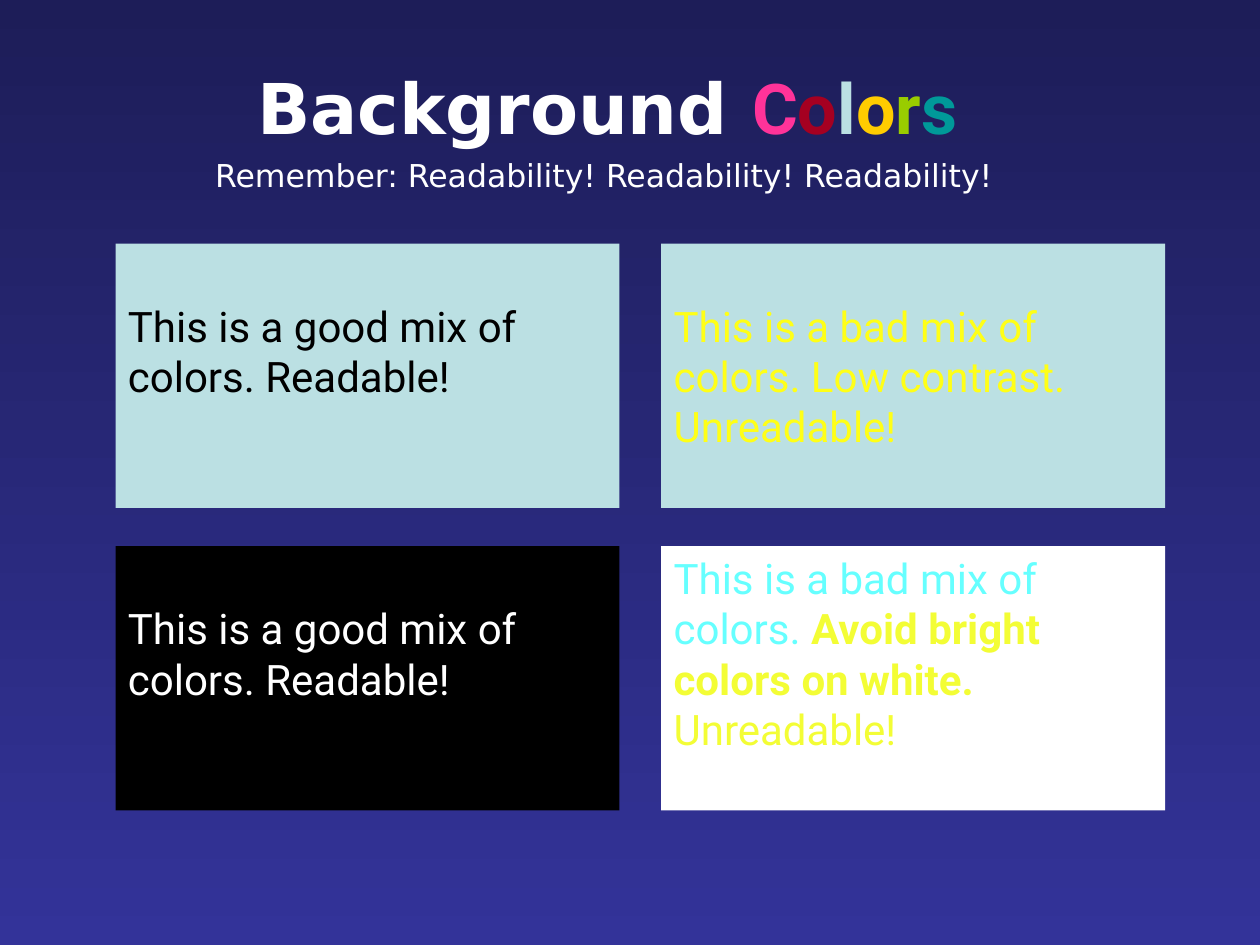
from pptx import Presentation
from pptx.dml.color import RGBColor
from pptx.enum.shapes import MSO_SHAPE
from pptx.enum.text import MSO_ANCHOR, PP_ALIGN
from pptx.util import Cm, Pt

RECTANGLE = MSO_SHAPE.RECTANGLE
TOP = MSO_ANCHOR.TOP
LEFT, CENTER = PP_ALIGN.LEFT, PP_ALIGN.CENTER

NIGHT = RGBColor(0x1D, 0x1D, 0x58)
INDIGO = RGBColor(0x33, 0x33, 0x99)
WHITE = RGBColor(0xFF, 0xFF, 0xFF)
BLACK = RGBColor(0x00, 0x00, 0x00)
PALE_BLUE = RGBColor(0xBB, 0xE0, 0xE3)
PINK = RGBColor(0xFF, 0x33, 0x99)
DARK_RED = RGBColor(0xA5, 0x00, 0x21)
GOLD = RGBColor(0xFF, 0xCC, 0x00)
LIME = RGBColor(0x99, 0xCC, 0x00)
TEAL = RGBColor(0x00, 0x99, 0x99)
YELLOW = RGBColor(0xFF, 0xFF, 0x17)
BRIGHT_YELLOW = RGBColor(0xF3, 0xFD, 0x35)
CYAN = RGBColor(0x66, 0xFF, 0xFF)

HEADING_FONT, BODY_FONT = "DejaVu Sans", "Roboto"

# Grid of examples
GRID_LEFT, GRID_TOP = 2.33, 4.91
BOX_WIDTH, BOX_HEIGHT = 10.16, 5.33
COLUMN_STEP, ROW_STEP = 11.0, 6.1
EDGE_INSET, LOWERED_INSET = 0.13, 1.14


def add_run(paragraph, text, *, color, size=24, font=BODY_FONT, bold=False):
    run = paragraph.add_run()
    run.text = text
    run.font.name = font
    run.font.size = Pt(size)
    run.font.bold = bold
    run.font.color.rgb = color


def write_lines(frame, lines, align=LEFT, spacing=1.0):
    """Each line is a list of (text, format) pairs."""
    for index, line in enumerate(lines):
        paragraph = frame.add_paragraph() if index else frame.paragraphs[0]
        paragraph.alignment = align
        paragraph.line_spacing = spacing
        for text, style in line:
            add_run(paragraph, text, **style)


def paint_background(slide):
    fill = slide.background.fill
    fill.gradient()
    fill.gradient_angle = 270
    for stop, color in zip(fill.gradient_stops, (NIGHT, INDIGO)):
        stop.color.rgb = color


def add_heading(slide):
    heading = slide.shapes.add_textbox(Cm(4.01), Cm(0.84), Cm(16.46), Cm(3.2))
    heading.text_frame.word_wrap = False
    title = [("Background ", dict(color=WHITE, size=40, font=HEADING_FONT, bold=True))]
    letter_colors = (PINK, DARK_RED, PALE_BLUE, GOLD, LIME, TEAL)
    for letter, color in zip("Colors", letter_colors):
        title.append((letter, dict(color=color, size=40, bold=True)))
    reminder = [
        ("Remember: Readability! Readability! Readability!",
         dict(color=WHITE, size=18, font=HEADING_FONT)),
        (" ", dict(color=BLACK, size=14)),
    ]
    write_lines(heading.text_frame, [title, reminder], CENTER, 1.2)


def add_example(slide, column, row, background, lines, top_inset=LOWERED_INSET):
    box = slide.shapes.add_shape(
        RECTANGLE,
        Cm(GRID_LEFT + column * COLUMN_STEP), Cm(GRID_TOP + row * ROW_STEP),
        Cm(BOX_WIDTH), Cm(BOX_HEIGHT))
    box.shadow.inherit = False
    box.fill.solid()
    box.fill.fore_color.rgb = background
    box.line.fill.background()
    frame = box.text_frame
    frame.word_wrap = True
    frame.vertical_anchor = TOP
    frame.margin_top = Cm(top_inset)
    write_lines(frame, lines)


def main():
    prs = Presentation()
    prs.slide_width, prs.slide_height = Cm(25.4), Cm(19.05)
    slide = prs.slides.add_slide(prs.slide_layouts[6])
    paint_background(slide)
    add_heading(slide)

    black, white = dict(color=BLACK), dict(color=WHITE)
    yellow, cyan = dict(color=YELLOW), dict(color=CYAN)
    bright = dict(color=BRIGHT_YELLOW)
    bright_bold = dict(color=BRIGHT_YELLOW, bold=True)

    # Light background
    add_example(slide, 0, 0, PALE_BLUE, [
        [("This is a good mix of colors. Readable!", black)]])
    add_example(slide, 1, 0, PALE_BLUE, [
        [("This is a bad mix of colors. Low contrast.", yellow)],
        [("Unreadable!", yellow)]])

    # Black and white backgrounds
    add_example(slide, 0, 1, BLACK, [
        [("This is a good mix of", white)],
        [("colors. Readable!", white)]])
    add_example(slide, 1, 1, WHITE, [
        [("This is a bad mix of", cyan)],
        [("colors. ", cyan), ("Avoid bright", bright_bold)],
        [("colors on white.", bright_bold)],
        [("Unreadable!", bright)]], top_inset=EDGE_INSET)

    prs.save("out.pptx")


if __name__ == "__main__":
    main()
